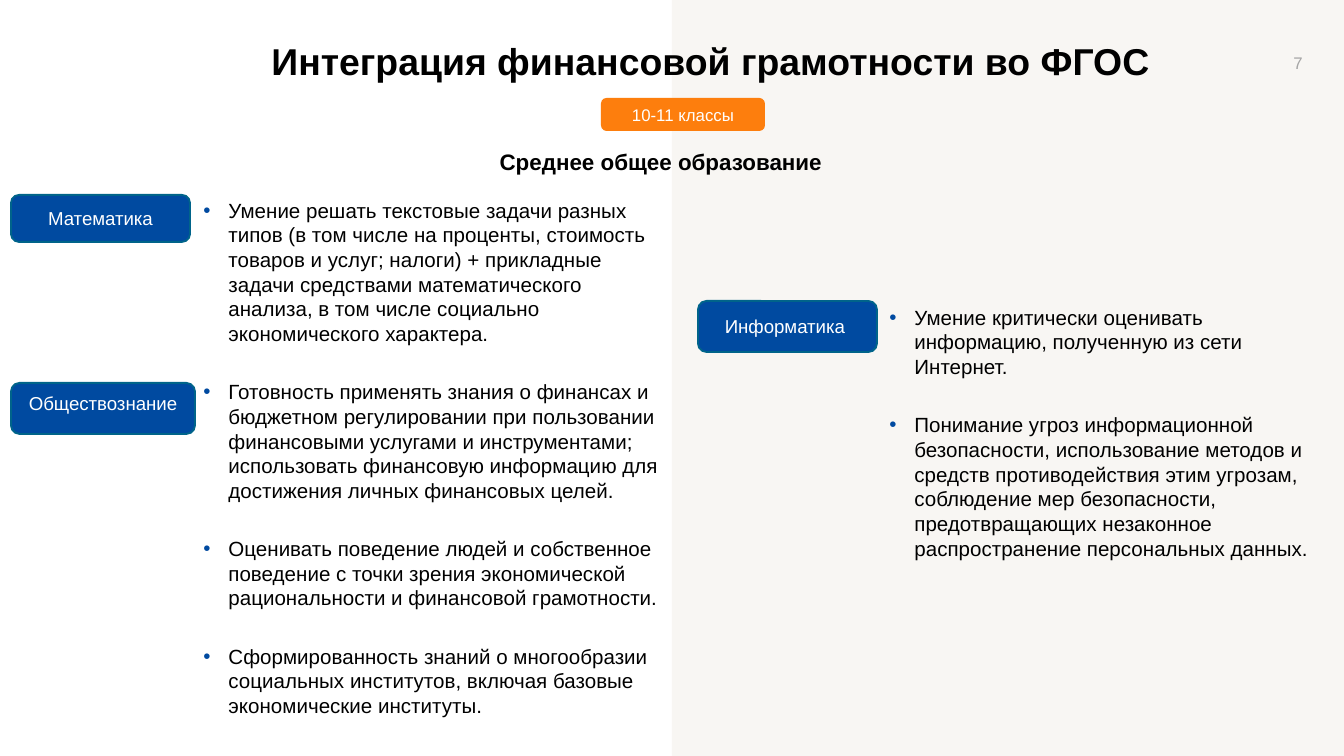
from lxml.etree import SubElement
from pptx import Presentation
from pptx.dml.color import RGBColor
from pptx.enum.shapes import MSO_SHAPE as Preset
from pptx.enum.text import MSO_ANCHOR as Anchor, MSO_AUTO_SIZE as AutoSize, PP_ALIGN as Align
from pptx.oxml.ns import qn
from pptx.util import Pt

EMU_PER_PX = 914400 / 134.4
COLORS = {
    "black": "000000", "white": "FFFFFF", "gray": "A6A6A6", "panel": "F8F6F3",
    "orange": "FD7E0D", "blue": "004AA0", "border": "00648A",
}
FONT = "Arial"
BULLET_INDENT = 25

LEFT_SKILLS = [
    "Умение решать текстовые задачи разных типов (в том числе на проценты, стоимость товаров и услуг; "
    "налоги) + прикладные задачи средствами математического анализа, в том числе социально "
    "экономического характера.",
    "Готовность применять знания о финансах и бюджетном регулировании при пользовании финансовыми "
    "услугами и инструментами; использовать финансовую информацию для достижения личных финансовых целей.",
    "Оценивать поведение людей и собственное поведение с точки зрения экономической рациональности "
    "и финансовой грамотности.",
    "Сформированность знаний о многообразии социальных институтов, включая базовые экономические институты.",
]
RIGHT_SKILLS = [
    "Умение критически оценивать информацию, полученную из сети Интернет.",
    "Понимание угроз информационной безопасности, использование методов и средств противодействия "
    "этим угрозам, соблюдение мер безопасности, предотвращающих незаконное распространение "
    "персональных данных.",
]
SUBJECTS = [
    ("Математика", (11, 195, 179, 47), Anchor.MIDDLE),
    ("Информатика ", (698, 301, 179, 51), Anchor.MIDDLE),
    ("Обществознание", (11, 383, 184, 51), Anchor.TOP),
]


def px(value):
    return round(value * EMU_PER_PX)


def rgb(name):
    return RGBColor.from_string(COLORS[name])


class SlideBuilder:
    def __init__(self, presentation):
        layout = presentation.slide_layouts.get_by_name("Two Content")
        self.slide = presentation.slides.add_slide(layout)
        self.slide.background.fill.solid()
        self.slide.background.fill.fore_color.rgb = rgb("white")

    def place(self, shape, box):
        shape.left, shape.top, shape.width, shape.height = map(px, box)

    def add_text(self, paragraph, text, size, color="black", bold=False, align=Align.LEFT):
        paragraph.alignment = align
        run = paragraph.add_run()
        run.text = text
        run.font.name, run.font.size, run.font.bold = FONT, Pt(size), bold
        run.font.color.rgb = rgb(color)

    def title(self, text, box):
        shape = self.slide.shapes.title
        self.place(shape, box)
        frame = shape.text_frame
        frame.auto_size = AutoSize.NONE
        frame.vertical_anchor = Anchor.MIDDLE
        self.add_text(frame.paragraphs[0], text, 20, bold=True)
        frame.paragraphs[0].line_spacing = 0.9

    def text_box(self, text, box, size, **style):
        frame = self.slide.shapes.add_textbox(*map(px, box)).text_frame
        frame.word_wrap = True
        frame.vertical_anchor = Anchor.MIDDLE
        self.add_text(frame.paragraphs[0], text, size, **style)

    def shape(self, preset, box, fill, line=None):
        shape = self.slide.shapes.add_shape(preset, *map(px, box))
        shape.shadow.inherit = False
        shape.fill.solid()
        shape.fill.fore_color.rgb = rgb(fill)
        if line:
            shape.line.color.rgb = rgb(line)
            shape.line.width = Pt(1)
        else:
            shape.line.fill.background()
        return shape

    def label(self, text, box, size, fill, line=None, anchor=Anchor.MIDDLE):
        frame = self.shape(Preset.ROUNDED_RECTANGLE, box, fill, line).text_frame
        frame.word_wrap = True
        frame.vertical_anchor = anchor
        self.add_text(frame.paragraphs[0], text, size, "white", align=Align.CENTER)

    def bullets(self, index, items, box):
        shape = self.slide.placeholders[index]
        self.place(shape, box)
        frame = shape.text_frame
        frame.auto_size = AutoSize.NONE
        for number, item in enumerate(items):
            paragraph = frame.add_paragraph() if number else frame.paragraphs[0]
            self.add_bullet(paragraph)
            paragraph.space_before = Pt(18 if number else 0)
            self.add_text(paragraph, item, 11)

    def add_bullet(self, paragraph):
        properties = paragraph._p.get_or_add_pPr()
        properties.set("marL", str(px(BULLET_INDENT)))
        properties.set("indent", str(-px(BULLET_INDENT)))
        color = SubElement(properties, qn("a:buClr"))
        SubElement(color, qn("a:srgbClr"), val=COLORS["blue"])
        SubElement(properties, qn("a:buFont"), typeface=FONT)
        SubElement(properties, qn("a:buChar"), char="•")


def main():
    presentation = Presentation()
    presentation.slide_width, presentation.slide_height = px(1344), px(756)
    builder = SlideBuilder(presentation)

    panel = builder.shape(Preset.RECTANGLE, (672, 0, 672, 756), "panel")
    builder.slide.shapes._spTree.insert(2, panel._element)  # behind the placeholders

    builder.title("Интеграция финансовой грамотности во ФГОС", (258, 32, 965, 63))
    builder.text_box("7", (1251, 43, 65, 40), 9, color="gray", align=Align.RIGHT)
    builder.text_box("Среднее общее образование", (485, 141, 352, 40), 12, bold=True, align=Align.CENTER)
    builder.label("10-11 классы", (601, 98, 164, 33), 9, "orange")
    for name, box, anchor in SUBJECTS:
        builder.label(name, box, 10, "blue", "border", anchor)
    builder.bullets(1, LEFT_SKILLS, (190, 191, 493, 597))
    builder.bullets(2, RIGHT_SKILLS, (876, 298, 453, 271))
    presentation.save("out.pptx")


if __name__ == "__main__":
    main()
